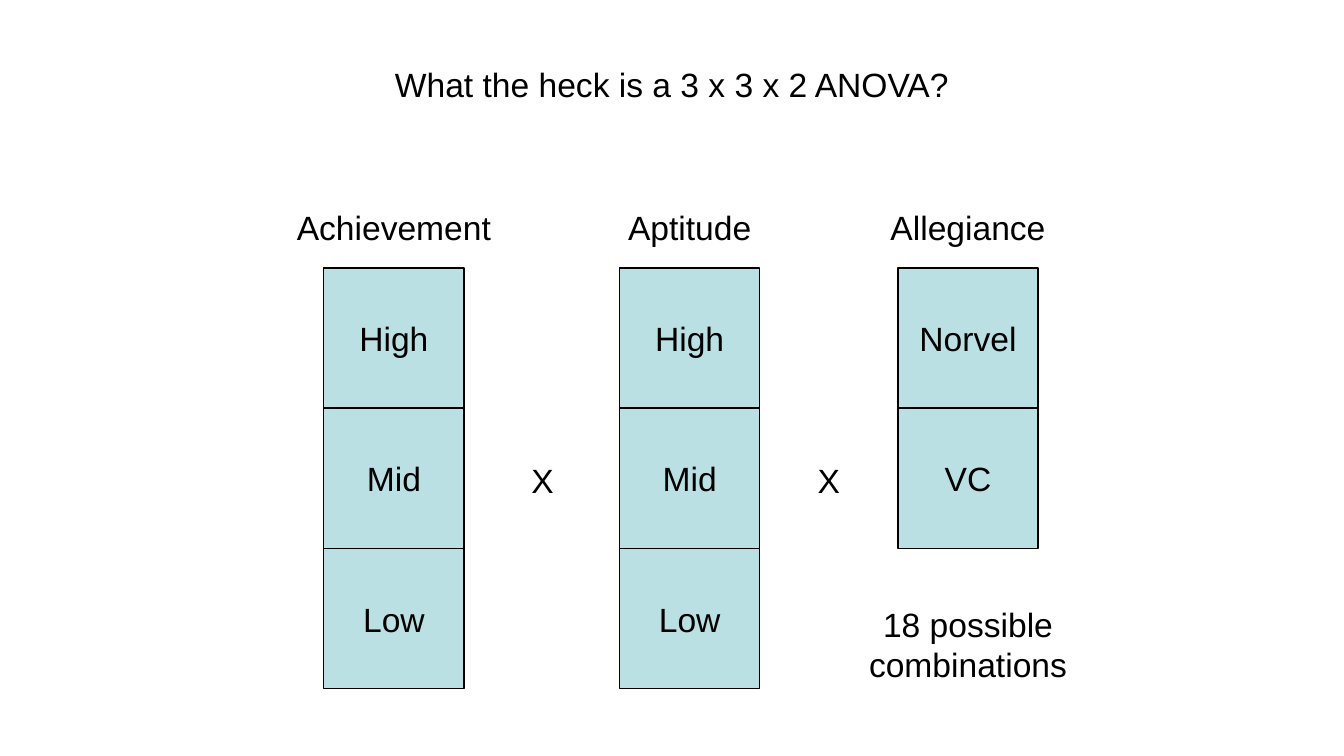
from pptx import Presentation
from pptx import util as u
from pptx.dml.color import RGBColor
from pptx.enum import shapes, text


def colour(value):
    return RGBColor.from_string(value)


def write(shape, words, anchor, side=0.25, edge=0.13):
    frame = shape.text_frame
    frame_format = {
        "word_wrap": True,
        "auto_size": text.MSO_AUTO_SIZE.NONE,
        "vertical_anchor": anchor,
        "margin_left": u.Cm(side),
        "margin_right": u.Cm(side),
        "margin_top": u.Cm(edge),
        "margin_bottom": u.Cm(edge),
    }
    for name, value in frame_format.items():
        setattr(frame, name, value)
    para = frame.paragraphs[0]
    para.alignment = text.PP_ALIGN.CENTER
    span = para.add_run()
    span.text = words
    for name, value in {"name": "Arial", "size": u.Pt(18)}.items():
        setattr(span.font, name, value)
    span.font.color.rgb = colour("000000")


deck = Presentation()
deck.slide_width, deck.slide_height = u.Cm(25.4), u.Cm(14.28)
page = deck.slides.add_slide(deck.slide_layouts[5])
top, middle = text.MSO_ANCHOR.TOP, text.MSO_ANCHOR.MIDDLE

# Title
title = page.shapes.title
place = {"left": 5.79, "top": 1.07, "width": 13.82, "height": 1.02}
for name, value in place.items():
    setattr(title, name, u.Cm(value))
write(title, "What the heck is a 3 x 3 x 2 ANOVA?", top)

# Factors: a stack of level squares for each
side = 2.65
stack_top = 5.06
factors = [
    ("Achievement", 6.12, ["High", "Mid", "Low"]),
    ("Aptitude", 11.71, ["High", "Mid", "Low"]),
    ("Allegiance", 16.97, ["Norvel", "VC"]),
]
for factor, left, levels in factors:
    for row, level in enumerate(levels):
        square = page.shapes.add_shape(
            shapes.MSO_SHAPE.RECTANGLE,
            u.Cm(left), u.Cm(stack_top + row * side), u.Cm(side), u.Cm(side))
        square.shadow.inherit = False
        square.fill.solid()
        square.fill.fore_color.rgb = colour("BBE0E3")
        square.line.color.rgb = colour("000000")
        square.line.width = u.Pt(0.75)
        write(square, level, middle, 0.18, 0.1)

# Factor names, times signs and the result
label_width = 4.22
labels = [(factor, left + (side - label_width) / 2, 3.78, label_width, 1.02)
          for factor, left, levels in factors]
labels += [("X", left, 8.55, 1.35, 1.02) for left in (9.58, 14.99)]
labels.append(("18 possible combinations", 15.88, 11.28, 4.83, 1.8))
for words, *bounds in labels:
    box = page.shapes.add_textbox(*map(u.Cm, bounds))
    write(box, words, top)

deck.save("out.pptx")
